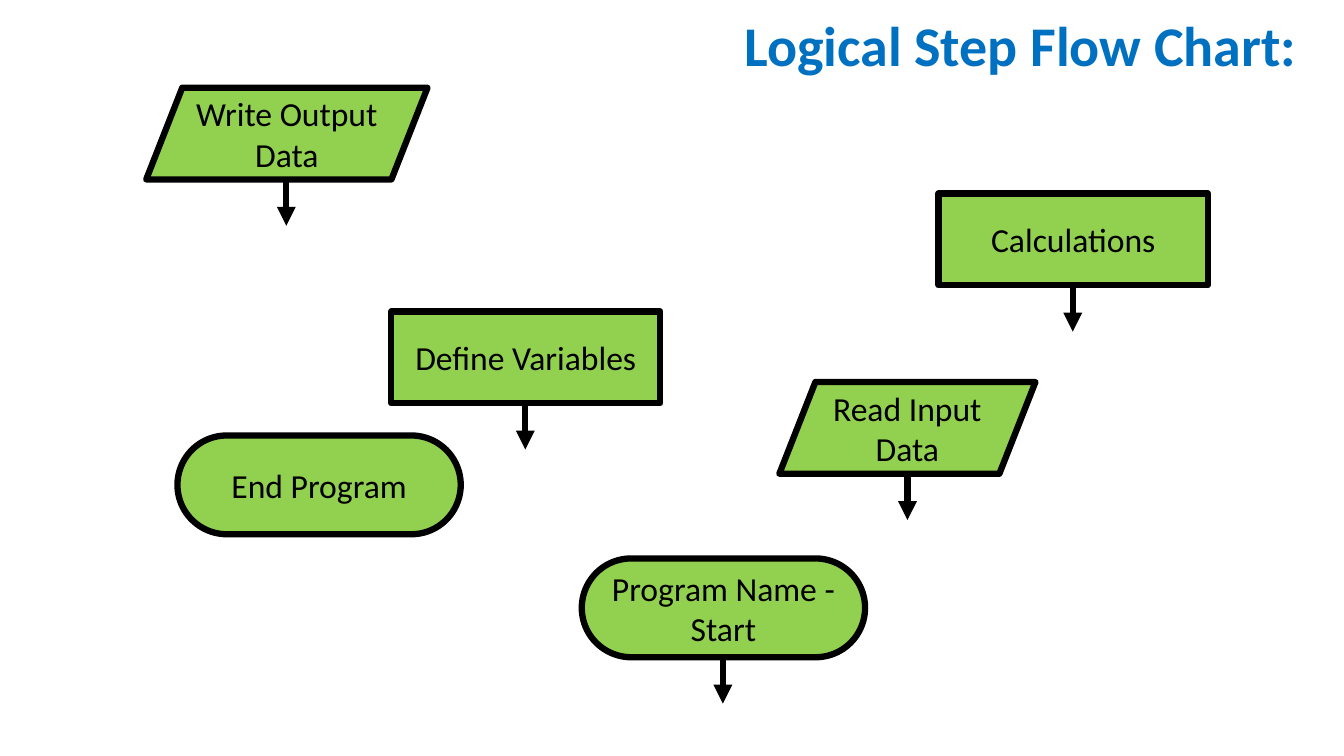
from pptx import Presentation, util as u
from pptx.dml.color import RGBColor
from pptx.enum import shapes, text
from pptx.oxml.ns import qn
from lxml import etree

PX = 9144  # EMU per px, 100 px to the inch
BLACK = RGBColor(0x00, 0x00, 0x00)
GREEN = RGBColor(0x92, 0xD0, 0x50)
BLUE = RGBColor(0x00, 0x70, 0xC0)
LINE_WIDTH = u.Pt(4.5)
ARROW_LENGTH = 46

TERMINAL = shapes.MSO_SHAPE.ROUNDED_RECTANGLE
DATA = shapes.MSO_SHAPE.PARALLELOGRAM
PROCESS = shapes.MSO_SHAPE.RECTANGLE
ADJUST = {TERMINAL: 0.5, DATA: 0.393}

# kind, label, left, top, width, height, has arrow
STEPS = [
    (TERMINAL, "End Program", 176, 432, 281, 98, False),
    (DATA, "Write Output Data", 145, 87, 279, 91, True),
    (PROCESS, "Define Variables", 388, 309, 267, 91, True),
    (DATA, "Read Input Data", 773, 379, 254, 91, True),
    (PROCESS, "Calculations", 931, 192, 267, 91, True),
    (TERMINAL, "Program Name - Start", 577, 554, 281, 98, True),
]


def px(*lengths):
    return [u.Emu(n * PX) for n in lengths]


def write(sp, words, size=24, color=BLACK, bold=False, spacing=None):
    tf = sp.text_frame
    tf.word_wrap = True
    tf.auto_size = text.MSO_AUTO_SIZE.NONE
    tf.vertical_anchor = text.MSO_ANCHOR.MIDDLE
    p = tf.paragraphs[0]
    p.alignment = text.PP_ALIGN.CENTER
    p.line_spacing = spacing
    r = p.add_run()
    r.text = words
    r.font.name = "Calibri"
    r.font.size = u.Pt(size)
    r.font.bold = bold
    r.font.color.rgb = color


def add_title(s, words):
    title = s.shapes.title
    title.left, title.top, title.width, title.height = px(707, 11, 610, 75)
    write(title, words, size=40, color=BLUE, bold=True, spacing=0.9)


def add_box(parent, kind, label, *box):
    sp = parent.add_shape(kind, *px(*box))
    sp.shadow.inherit = False
    if kind in ADJUST:
        sp.adjustments[0] = ADJUST[kind]
    sp.fill.solid()
    sp.fill.fore_color.rgb = GREEN
    sp.line.color.rgb = BLACK
    sp.line.width = LINE_WIDTH
    write(sp, label)


def add_arrow(parent, x, y):
    arrow = parent.add_connector(
        shapes.MSO_CONNECTOR.STRAIGHT, *px(x, y, x, y + ARROW_LENGTH))
    arrow.line.color.rgb = BLACK
    arrow.line.width = LINE_WIDTH
    etree.SubElement(arrow.line._get_or_add_ln(), qn("a:tailEnd"), type="triangle")
    etree.SubElement(arrow._element.spPr, qn("a:effectLst"))


def add_step(s, kind, label, left, top, width, height, has_arrow):
    # A step and its arrow move together as one group
    parent = s.shapes.add_group_shape().shapes if has_arrow else s.shapes
    add_box(parent, kind, label, left, top, width, height)
    if has_arrow:
        add_arrow(parent, left + width // 2, top + height)


def main():
    prs = Presentation()
    prs.slide_width, prs.slide_height = u.Inches(13.33), u.Inches(7.5)
    s = prs.slides.add_slide(prs.slide_layouts[5])  # title only
    add_title(s, "Logical Step Flow Chart:")
    for step in STEPS:
        add_step(s, *step)
    prs.save("out.pptx")


if __name__ == "__main__":
    main()
